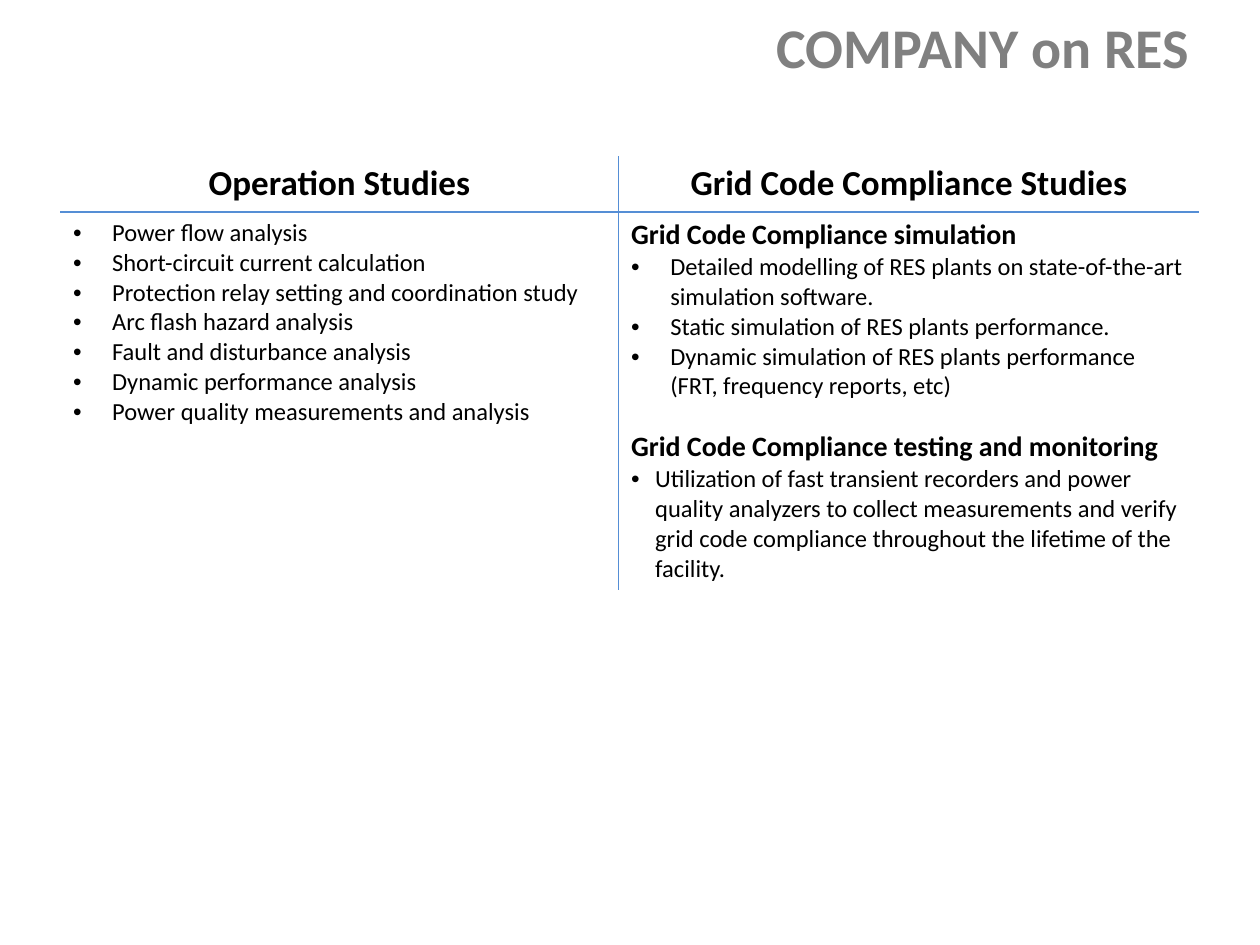
import pptx
import pptx.util
import pptx.dml.color
import pptx.enum.text
import pptx.oxml
import pptx.oxml.ns
from lxml import etree

Inches = pptx.util.Inches
Pt = pptx.util.Pt
ALIGN = pptx.enum.text.PP_ALIGN
ANCHOR = pptx.enum.text.MSO_ANCHOR

COLORS = {"title": "808080", "text": "000000", "rule": "558ED5"}
FONT = "Calibri"
WIDE, NARROW = 0.31, 0.19

HEADERS = ["Operation Studies", "Grid Code Compliance Studies"]
OPERATION = [
    ("Power flow analysis", WIDE),
    ("Short-circuit current calculation", WIDE),
    ("Protection relay setting and coordination study", WIDE),
    ("Arc flash hazard analysis", WIDE),
    ("Fault and disturbance analysis", WIDE),
    ("Dynamic performance analysis", WIDE),
    ("Power quality measurements and analysis", WIDE),
]
COMPLIANCE = [
    ("Grid Code Compliance simulation", None),
    ("Detailed modelling of RES plants on state-of-the-art simulation software.", WIDE),
    ("Static simulation of RES plants performance.", WIDE),
    ("Dynamic simulation of RES plants performance (FRT, frequency reports, etc)", WIDE),
    ("Grid Code Compliance testing and monitoring", None),
    ("Utilization of fast transient recorders and power quality analyzers to collect "
     "measurements and verify grid code compliance throughout the lifetime of the facility.",
     NARROW),
]


def add_child(parent, tag, **attributes):
    return etree.SubElement(parent, pptx.oxml.ns.qn(tag), **attributes)


def style_spans(para, size, color, bold):
    for span in para.runs:
        span.font.name = FONT
        span.font.size = Pt(size)
        span.font.bold = bold
        span.font.color.rgb = pptx.dml.color.RGBColor.from_string(COLORS[color])


def add_bullet(para, indent):
    properties = para._p.get_or_add_pPr()
    properties.set("marL", str(Inches(indent)))
    properties.set("indent", str(-Inches(indent)))
    add_child(properties, "a:buFont", typeface="Arial")
    add_child(properties, "a:buChar", char="•")


def rule_cell(cell, ruled_sides):
    properties = cell._tc.get_or_add_tcPr()
    for side in "LRTB":
        line = add_child(properties, "a:ln" + side, w=str(Pt(1)))
        if side in ruled_sides:
            fill = add_child(line, "a:solidFill")
            add_child(fill, "a:srgbClr", val=COLORS["rule"])
        else:
            add_child(line, "a:noFill")
    cell.fill.background()


def fill_header(cell, text):
    cell.text_frame.text = text
    cell.vertical_anchor = ANCHOR.MIDDLE
    para = cell.text_frame.paragraphs[0]
    para.alignment = ALIGN.CENTER
    style_spans(para, 20, "text", True)


def fill_body(cell, items):
    cell.text_frame.text = "\n".join(text for text, indent in items)
    for index, (para, (text, indent)) in enumerate(zip(cell.text_frame.paragraphs, items)):
        heading = indent is None
        if heading and index:
            para.space_before = Pt(16.5)
        if not heading:
            add_bullet(para, indent)
        style_spans(para, 16 if heading else 14, "text", heading)


def place_title(page, left, top, width, height):
    box = page.shapes.title
    box.left, box.top, box.width, box.height = left, top, width, height
    frame = box.text_frame
    frame.text = "COMPANY on RES"
    frame.margin_left = frame.margin_right = frame.margin_top = frame.margin_bottom = 0
    frame.vertical_anchor = ANCHOR.TOP
    frame.auto_size = pptx.enum.text.MSO_AUTO_SIZE.NONE
    frame.paragraphs[0].alignment = ALIGN.RIGHT
    style_spans(frame.paragraphs[0], 32, "title", True)


def place_studies(page, left, top, width, height):
    table = page.shapes.add_table(2, 2, left, top, width, height).table
    table.first_row = table.horz_banding = False
    table.columns[0].width = Inches(4.43)
    table.columns[1].width = width - table.columns[0].width
    table.rows[0].height = Inches(0.43)
    table.rows[1].height = height - table.rows[0].height
    for column, (header, items) in enumerate(zip(HEADERS, [OPERATION, COMPLIANCE])):
        inner_side = "RL"[column]
        fill_header(table.cell(0, column), header)
        fill_body(table.cell(1, column), items)
        rule_cell(table.cell(0, column), inner_side + "B")
        rule_cell(table.cell(1, column), inner_side + "T")


def main():
    deck = pptx.Presentation()
    deck.slide_width, deck.slide_height = Inches(10), Inches(7.5)
    page = deck.slides.add_slide(deck.slide_layouts[5])
    place_title(page, Inches(2.41), Inches(0.1), Inches(7.03), Inches(0.54))
    place_studies(page, Inches(0.48), Inches(1.24), Inches(9.04), Inches(3.39))
    deck.save("out.pptx")


if __name__ == "__main__":
    main()
